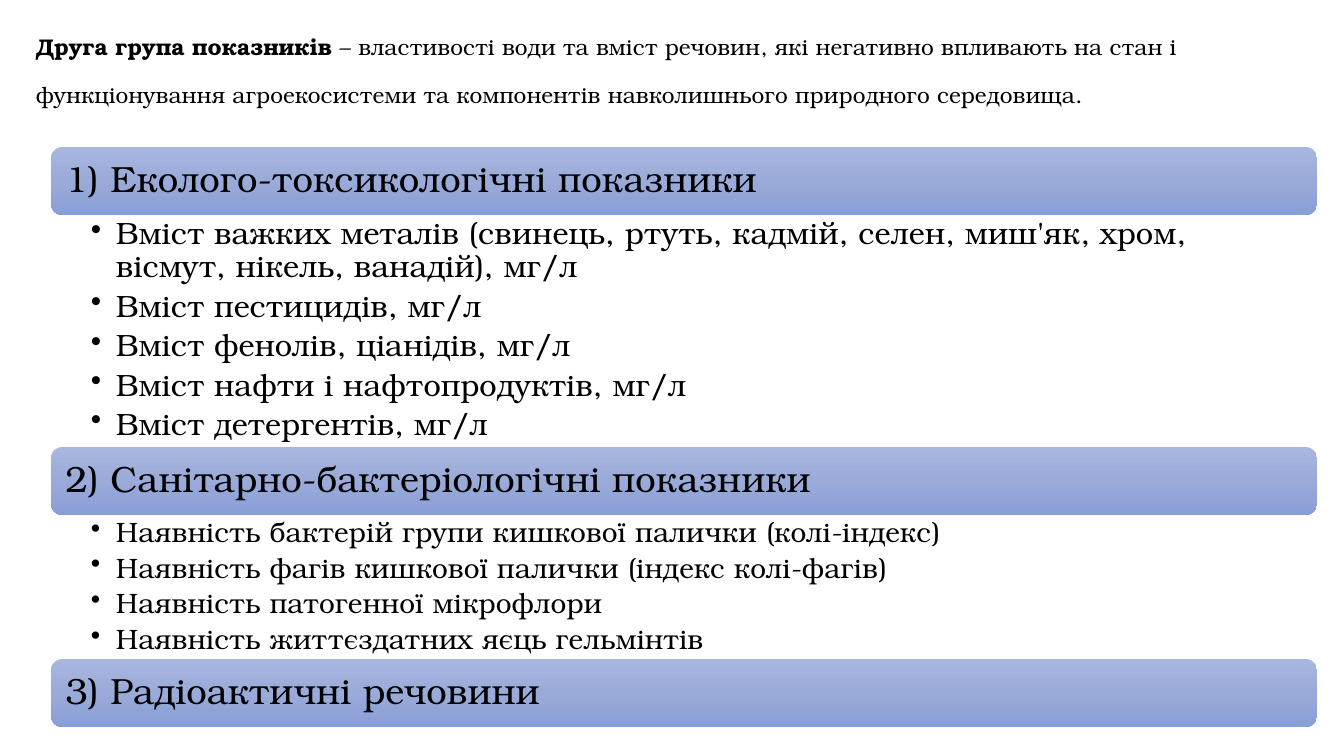
import copy
from dataclasses import dataclass

import pptx
import pptx.dml.color
import pptx.enum.shapes
import pptx.enum.text
import pptx.oxml.ns
import pptx.util
from lxml import etree

EMU_PER_PX = 914400 / 100.8


@dataclass(frozen=True)
class Theme:
    font: str = "TeX Gyre Bonum"
    text: str = "000000"
    bar_stops: tuple = ((0, "A8B7DF"), (0.5, "9AABD9"), (1, "889ED7"))
    title_size: int = 28
    bar_size: int = 26
    line_spacing: float = 0.9


THEME = Theme()
TITLE = [
    ("Друга група показників ", True),
    ("– властивості води та вміст речовин, які негативно впливають на стан і "
     "функціонування агроекосистеми та компонентів навколишнього природного "
     "середовища.", False),
]
# heading, bullet size, height of the bullet area, bullets
GROUPS = [
    ("1) Еколого-токсикологічні показники", 22, 232, [
        "Вміст важких металів (свинець, ртуть, кадмій, селен, миш'як, хром, "
        "вісмут, нікель, ванадій), мг/л",
        "Вміст пестицидів, мг/л",
        "Вміст фенолів, ціанідів, мг/л",
        "Вміст нафти і нафтопродуктів, мг/л",
        "Вміст детергентів, мг/л",
    ]),
    ("2) Санітарно-бактеріологічні показники", 20, 144, [
        "Наявність бактерій групи кишкової палички (колі-індекс)",
        "Наявність фагів кишкової палички (індекс колі-фагів)",
        "Наявність патогенної мікрофлори",
        "Наявність життєздатних яєць гельмінтів",
    ]),
    ("3) Радіоактичні речовини", 20, 0, []),
]


def px(n):
    return pptx.util.Emu(round(n * EMU_PER_PX))


def rgb(color):
    return pptx.dml.color.RGBColor.from_string(color)


def qn(tag):
    return pptx.oxml.ns.qn(tag)


def set_frame(tf, insets, anchor):
    """Wrap the text; insets are left, top, right and bottom in px."""
    tf.word_wrap = True
    tf.auto_size = pptx.enum.text.MSO_AUTO_SIZE.NONE
    tf.vertical_anchor = anchor
    tf.margin_left, tf.margin_top, tf.margin_right, tf.margin_bottom = map(px, insets)


def set_paragraph(p, space_after=0):
    p.alignment = pptx.enum.text.PP_ALIGN.LEFT
    p.line_spacing = THEME.line_spacing
    p.space_after = pptx.util.Pt(space_after)


def add_run(p, text, size, bold=False):
    r = p.add_run()
    r.text = text
    r.font.name = THEME.font
    r.font.size = pptx.util.Pt(size)
    r.font.bold = bold
    r.font.color.rgb = rgb(THEME.text)
    return r


def add_title(slide, x, y, w, h):
    """Lowered title text, closed by a line break that lifts it in its box."""
    tf = slide.shapes.add_textbox(px(x), px(y), px(w), px(h)).text_frame
    set_frame(tf, (10, 5, 10, 5), pptx.enum.text.MSO_ANCHOR.MIDDLE)
    p = tf.paragraphs[0]
    set_paragraph(p)
    for text, bold in TITLE:
        r = add_run(p, text, THEME.title_size, bold)
        r.font._element.set("baseline", "-25000")
    p.add_line_break()
    props = r.font._element
    p._p[-1].append(copy.deepcopy(props))
    end = etree.SubElement(p._p, qn("a:endParaRPr"), dict(props.attrib))
    end.extend(copy.deepcopy(child) for child in props)


def fill_bar(sp):
    sp.fill.gradient()
    sp.fill.gradient_angle = 270
    first = sp._element.spPr.find(".//" + qn("a:gs"))
    first.addnext(copy.deepcopy(first))
    for stop, (position, color) in zip(sp.fill.gradient_stops, THEME.bar_stops):
        stop.position = position
        stop.color.rgb = rgb(color)


def add_bar(slide, x, y, w, h, heading):
    sp = slide.shapes.add_shape(
        pptx.enum.shapes.MSO_SHAPE.ROUNDED_RECTANGLE, px(x), px(y), px(w), px(h))
    sp.shadow.inherit = False
    sp.line.fill.background()
    fill_bar(sp)
    set_frame(sp.text_frame, (11, 11, 11, 11), pptx.enum.text.MSO_ANCHOR.MIDDLE)
    p = sp.text_frame.paragraphs[0]
    set_paragraph(p, THEME.bar_size * 0.35)
    add_run(p, heading, THEME.bar_size)


def add_bullets(slide, x, y, w, h, items, size):
    tf = slide.shapes.add_textbox(px(x), px(y), px(w), px(h)).text_frame
    set_frame(tf, (40, 3, 18, 3), pptx.enum.text.MSO_ANCHOR.TOP)
    for i, item in enumerate(items):
        p = tf.add_paragraph() if i else tf.paragraphs[0]
        set_paragraph(p, size * 0.2)
        pPr = p._p.get_or_add_pPr()
        pPr.set("marL", str(px(25)))
        pPr.set("indent", str(-px(25)))
        etree.SubElement(pPr, qn("a:buChar"), char="•")
        add_run(p, item, size)


def add_groups(slide, x, y, w, bar_h):
    """Stack each heading bar on its bullets, with no gap between."""
    for heading, size, body_h, items in GROUPS:
        add_bar(slide, x, y, w, bar_h, heading)
        y += bar_h
        if items:
            add_bullets(slide, x, y, w, body_h, items, size)
        y += body_h


def main():
    prs = pptx.Presentation()
    prs.slide_width, prs.slide_height = px(1344), px(756)
    slide = prs.slides.add_slide(prs.slide_layouts[6])
    add_title(slide, 26, 21, 1281, 122)
    add_groups(slide, 51, 147, 1266, 68)
    prs.save("out.pptx")


if __name__ == "__main__":
    main()
